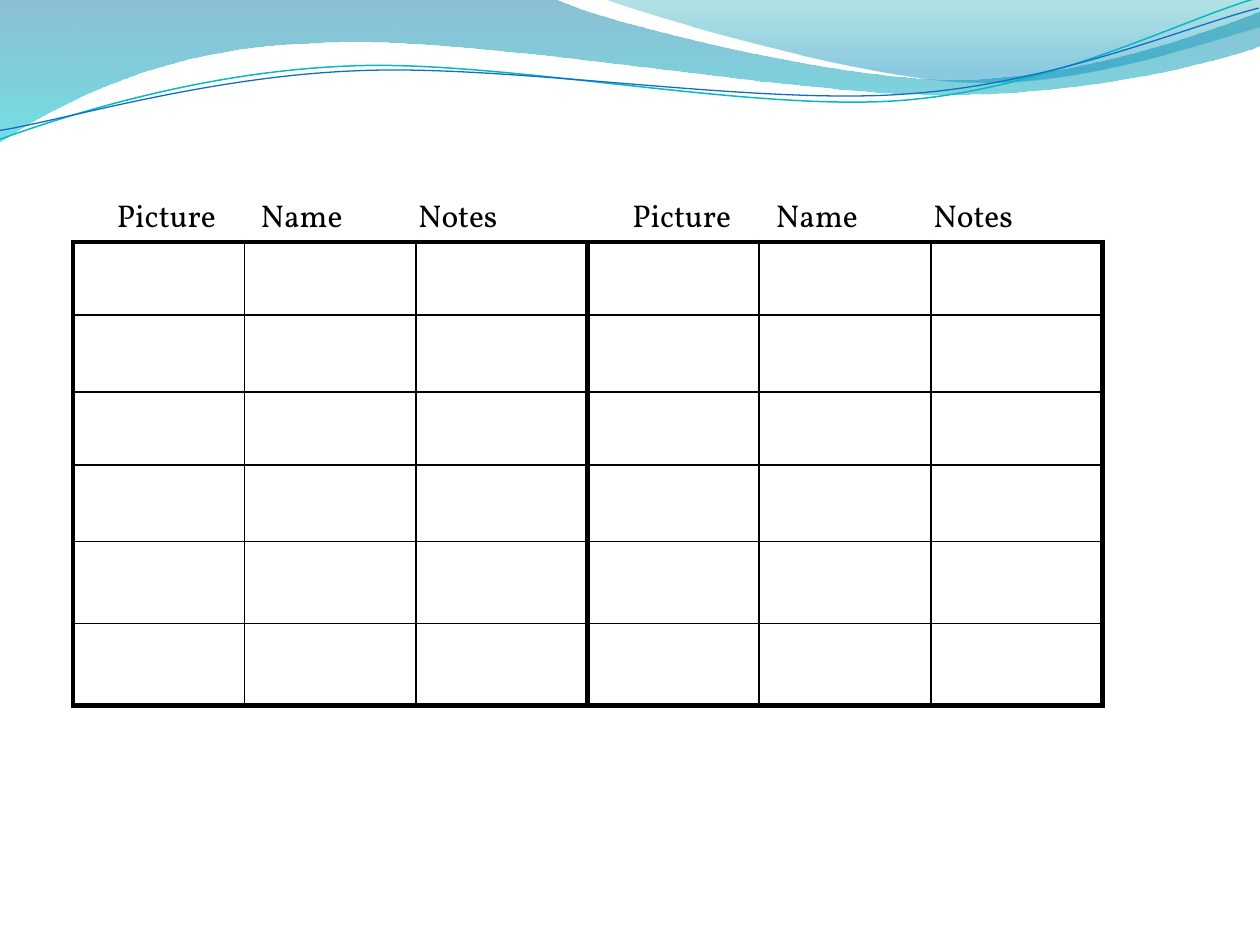
"""Build a slide with a wave banner and a blank picture, name and notes table."""
from lxml import etree
from pptx import Presentation
from pptx import util as u
from pptx.dml.color import RGBColor
from pptx.enum import text
from pptx.oxml import ns

PX = 9144
FONT = "Vollkorn"


def color(value):
    return RGBColor.from_string(value)


def add_wave(page, start, segments, closed):
    points = [pair for segment in segments for pair in zip(segment[::2], segment[1::2])]
    builder = page.shapes.build_freeform(*start, scale=PX)
    builder.add_line_segments(points, close=closed)
    wave = builder.convert_to_shape()
    wave.shadow.inherit = False
    nodes = iter(list(wave.element.iter(ns.qn("a:lnTo"))))
    for segment in segments:
        first = next(nodes)
        if len(segment) == 6:
            curve = etree.Element(ns.qn("a:cubicBezTo"))
            first.addprevious(curve)
            for node in (first, next(nodes), next(nodes)):
                curve.append(node[0])
                node.getparent().remove(node)
    return wave


deck = Presentation()
deck.slide_width, deck.slide_height = 1000 * PX, 750 * PX
page = deck.slides.add_slide(deck.slide_layouts[6])

bands = [
    ((0, 0), [(440, -1), (476, 17, 664, 63, 758, 63), (853, 63, 958, 26, 1000, 9), (1001, 36),
              (983, 44, 870, 76, 746, 75), (622, 75, 382, 28, 257, 34), (129, 36, 46, 83, -1, 113), (0, 0)],
     [(0, "0074A1", 45), (1, "00C6CF", 55)]),
    ((479, -1), [(509, 11, 682, 62, 769, 65), (856, 69, 961, 32, 1000, 21), (1000, 0), (479, -1)],
     [(0, "00A1A9", 30), (0.8, "008BBF", 45)]),
]
for start, segments, stops in bands:
    band = add_wave(page, start, segments, True)
    band.line.fill.background()
    band.fill.gradient()
    band.fill.gradient_angle = 270
    for stop, (position, shade, opacity) in zip(band.fill.gradient_stops, stops):
        stop.position = position
        stop.color.rgb = color(shade)
    for node, (position, shade, opacity) in zip(band.element.iter(ns.qn("a:srgbClr")), stops):
        etree.SubElement(node, ns.qn("a:alpha"), val=str(opacity * 1000))

strands = [
    ((-2, 87), [(47, 72, 158, 41, 277, 42), (396, 42, 591, 93, 712, 90), (832, 87, 940, 36, 1000, 22)],
     "0AB8BF", 0.85),
    ((-2, 80), [(46, 75, 164, 45, 283, 46), (403, 46, 596, 88, 716, 85), (835, 83, 942, 42, 1001, 30)],
     "0F6FC6", 0.75),
]
for start, segments, shade, width in strands:
    strand = add_wave(page, start, segments, False)
    strand.rotation = 357.3
    strand.fill.background()
    strand.line.color.rgb = color(shade)
    strand.line.width = u.Pt(width)

row_heights = [58, 61, 58, 61, 65, 65]
frame = page.shapes.add_table(6, 6, 58 * PX, 192 * PX, 817 * PX, sum(row_heights) * PX)
table = frame.table
table.first_row = table.horz_banding = False
for row, height in enumerate(row_heights):
    table.rows[row].height = height * PX
    for col in range(6):
        cell = table.cell(row, col)
        properties = cell._tc.get_or_add_tcPr()
        thick = {"L": col % 3 == 0, "R": col % 3 == 2, "T": row == 0, "B": row == 5}
        for side, heavy in thick.items():
            border = etree.SubElement(properties, ns.qn(f"a:ln{side}"), w=str(u.Pt(3 if heavy else 1)))
            fill = etree.SubElement(border, ns.qn("a:solidFill"))
            etree.SubElement(fill, ns.qn("a:srgbClr"), val="000000")
        cell.fill.background()

for left in (83, 492):
    box = page.shapes.add_textbox(left * PX, 151 * PX, 362 * PX, 40 * PX)
    box.text_frame.word_wrap = True
    box.text_frame.auto_size = text.MSO_AUTO_SIZE.SHAPE_TO_FIT_TEXT
    para = box.text_frame.paragraphs[0]
    para.text = "Picture\tName\tNotes"
    para.font.name = FONT
    para.font.size = u.Pt(18)
    para.font.color.rgb = color("000000")
    tabs = etree.Element(ns.qn("a:tabLst"))
    for position in (114, 239):
        etree.SubElement(tabs, ns.qn("a:tab"), pos=str(position * PX), algn="l")
    para._p.get_or_add_pPr().insert(0, tabs)

deck.save("out.pptx")
